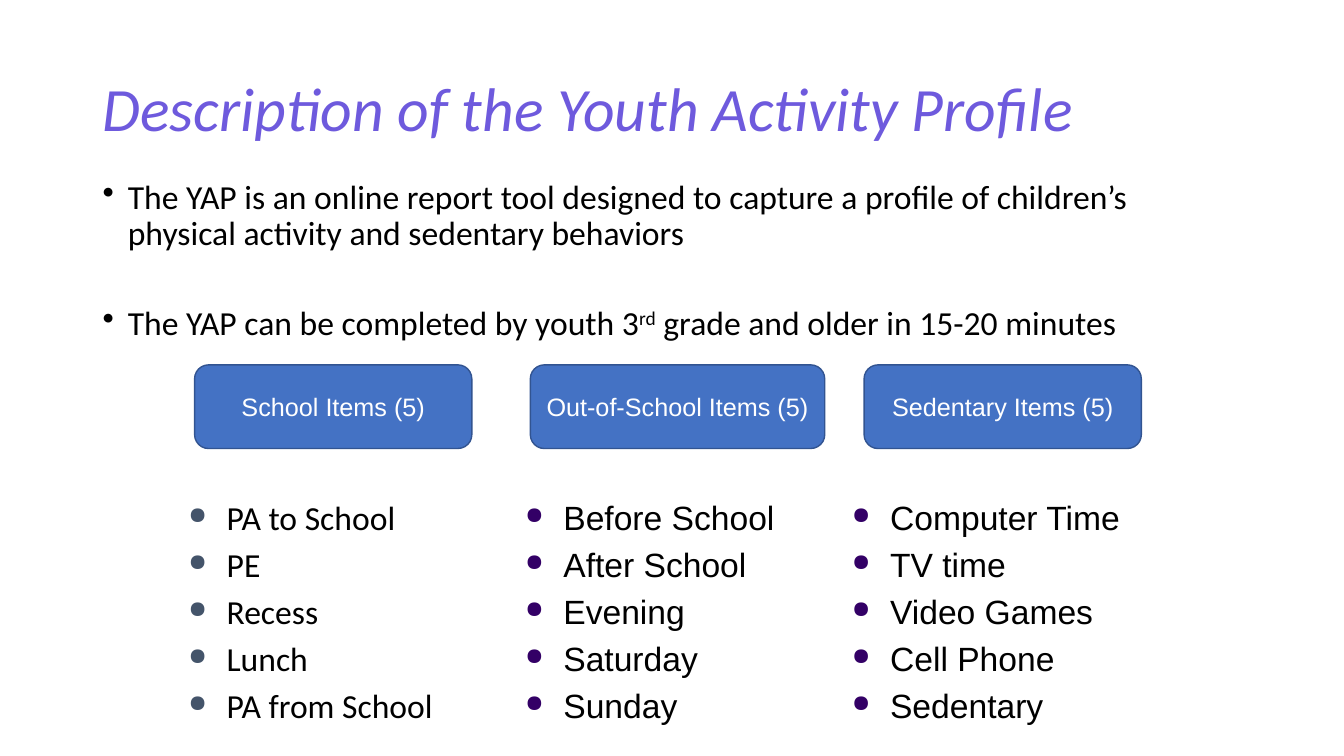
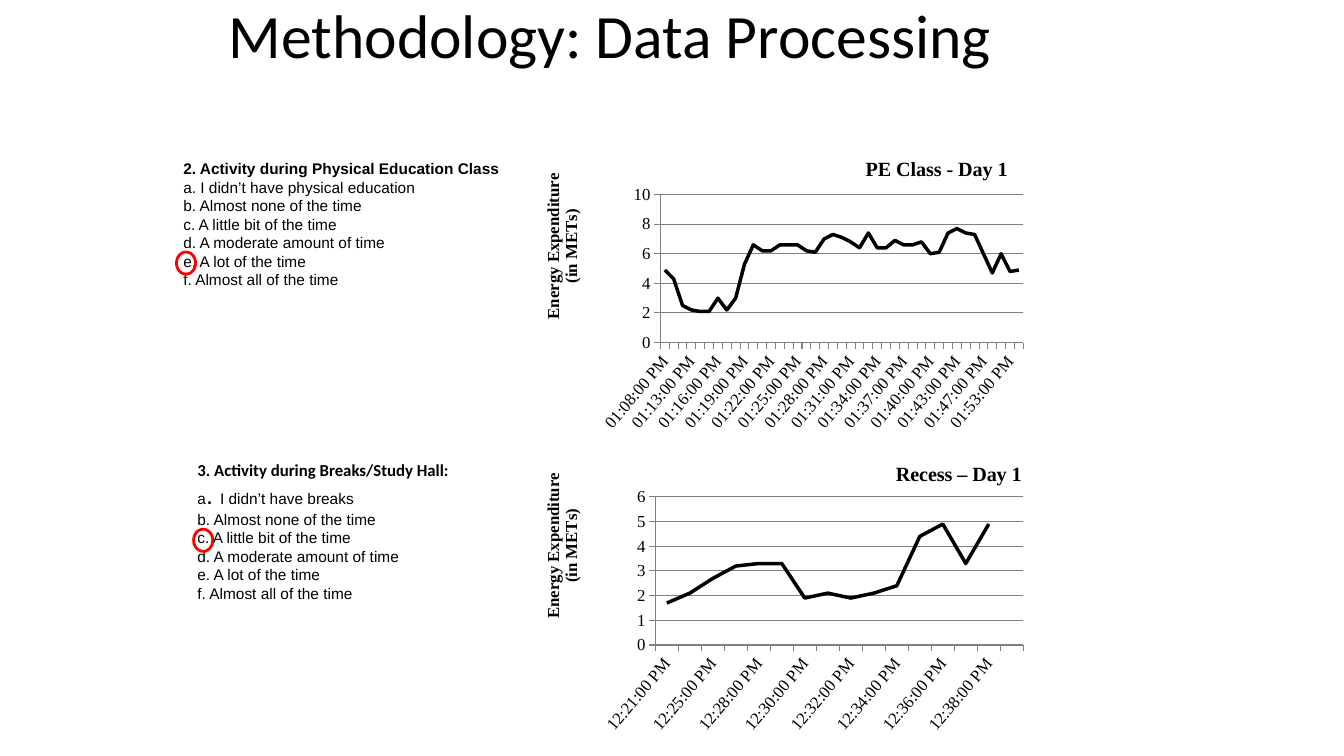
"""Builds two slides on the Youth Activity Profile and its data processing."""
import lxml.etree
import pptx
import pptx.chart.data
import pptx.dml.color
import pptx.enum.chart
import pptx.enum.shapes
import pptx.enum.text
import pptx.oxml
import pptx.oxml.ns
import pptx.util

PX = 9144
SLIDE_SIZE = (1333, 750)
COLORS = {
    "text": "000000", "title": "6E5ADD", "box": "4472C4", "box_line": "325491",
    "box_text": "FFFFFF", "bullet_slate": "44546A", "bullet_purple": "330066",
    "circle": "FF0000", "grid": "808080",
}
SANS, HUMANIST, SERIF = "Arial", "Calibri", "Times New Roman"
QN = pptx.oxml.ns.qn

PROFILE_TITLE = "Description of the Youth Activity Profile"
PROFILE_POINTS = [
    "The YAP is an online report tool designed to capture a profile of children’s "
    "physical activity and sedentary behaviors",
    [("The YAP can be completed by youth 3", {}), ("rd", {"raised": True}),
     (" grade and older in 15-20 minutes", {})],
]
ITEM_GROUPS = [
    {"heading": "School Items (5)", "left": 193, "width": 275, "list_left": 177,
     "font": HUMANIST, "bullet": "bullet_slate",
     "items": ["PA to School", "PE", "Recess", "Lunch", "PA from School"]},
    {"heading": "Out-of-School Items (5)", "left": 526, "width": 292, "list_left": 511,
     "font": SANS, "bullet": "bullet_purple",
     "items": ["Before School", "After School", "Evening", "Saturday", "Sunday"]},
    {"heading": "Sedentary Items (5)", "left": 857, "width": 275, "list_left": 835,
     "font": SANS, "bullet": "bullet_purple",
     "items": ["Computer Time", "TV time", "Video Games", "Cell Phone", "Sedentary"]},
]

METHOD_TITLE = "Methodology: Data Processing"
SHARED_ANSWERS = [
    "b. Almost none of the time", "c. A little bit of the time",
    "d. A moderate amount of time", "e. A lot of the time", "f. Almost all of the time",
]
QUESTIONS = [
    {"box": (172, 153, 336, 142), "circle": (175, 250), "gap": 0,
     "heading": ("2. Activity during Physical Education Class", {"bold": True}),
     "first": "a. I didn’t have physical education"},
    {"box": (186, 453, 273, 153), "circle": (192, 525), "gap": 8,
     "heading": ("3. Activity during Breaks/Study Hall:",
                 {"bold": True, "size": 12, "font": HUMANIST}),
     "first": [("a", {}), (". ", {"size": 18}), ("I didn’t have breaks", {})]},
]
AXIS_TITLE = "Energy Expenditure\n(in METs)"
CHARTS = [
    {"title": "PE Class - Day 1", "top": 133, "label_step": 3, "scale": (10, 2),
     "title_at": (0.66, 0.06), "axis_title_at": (0.02, 0.12),
     "plot": (0.26, 0.2, 0.72, 0.49),
     "minutes": [788, 790, 792, *range(793, 826), *range(827, 836, 2)],
     "mets": [4.9, 4.3, 2.5, 2.2, 2.1, 2.1, 3, 2.2, 3, 5.3, 6.6, 6.2, 6.2, 6.6, 6.6,
              6.6, 6.2, 6.1, 7, 7.3, 7.1, 6.8, 6.4, 7.4, 6.4, 6.4, 6.9, 6.6, 6.6, 6.8,
              6, 6.1, 7.4, 7.7, 7.4, 7.3, 6, 4.7, 6, 4.8, 4.9]},
    {"title": "Recess – Day 1", "top": 433, "label_step": 2, "scale": (6, 1),
     "title_at": (0.72, 0.07), "axis_title_at": (0.02, 0.11),
     "plot": (0.25, 0.2, 0.73, 0.49),
     "minutes": [741, 743, 745, 747, *range(748, 760)],
     "mets": [1.7, 2.1, 2.7, 3.2, 3.3, 3.3, 1.9, 2.1, 1.9, 2.1, 2.4, 4.4, 4.9, 3.3,
              4.9, None]},
]


def emu(*lengths):
    return [length * PX for length in lengths]


def rgb(name):
    return pptx.dml.color.RGBColor.from_string(COLORS[name])


def style_font(font, face, size, color="text", bold=False, italic=False):
    font.name, font.size, font.bold, font.italic = face, pptx.util.Pt(size), bold, italic
    font.color.rgb = rgb(color)


def add_bullet(paragraph, char, indent, color=None, percent=None):
    properties = paragraph._p.get_or_add_pPr()
    properties.set("marL", str(indent * PX))
    properties.set("indent", str(-indent * PX))
    if color:
        tint = lxml.etree.SubElement(properties, QN("a:buClr"))
        lxml.etree.SubElement(tint, QN("a:srgbClr")).set("val", COLORS[color])
    if percent:
        lxml.etree.SubElement(properties, QN("a:buSzPct")).set("val", str(percent * 1000))
    lxml.etree.SubElement(properties, QN("a:buChar")).set("char", char)


def fill_text(frame, lines, face, size, color="text", italic=False, spacing=None,
              bullet=None, gaps=(), align=None):
    for index, line in enumerate(lines):
        paragraph = frame.paragraphs[0] if index == 0 else frame.add_paragraph()
        if bullet:
            add_bullet(paragraph, **bullet)
        if spacing:
            paragraph.line_spacing = spacing
        if index and index <= len(gaps):
            paragraph.space_before = pptx.util.Pt(gaps[index - 1])
        if align is not None:
            paragraph.alignment = align
        pieces = [(line, {})] if isinstance(line, str) else line
        for text, changes in pieces:
            run = paragraph.add_run()
            run.text = text
            style_font(run.font, changes.get("font", face), changes.get("size", size),
                       color, changes.get("bold", False), italic)
            if changes.get("raised"):
                run._r.get_or_add_rPr().set("baseline", "30000")


def add_text(slide, box, lines, face, size, wrap=True, middle=False, **options):
    frame = slide.shapes.add_textbox(*emu(*box)).text_frame
    frame.word_wrap = wrap
    anchors = pptx.enum.text.MSO_ANCHOR
    frame.vertical_anchor = anchors.MIDDLE if middle else anchors.TOP
    fill_text(frame, lines, face, size, **options)


def add_title(slide, box, text, **options):
    add_text(slide, box, [text], HUMANIST, 44, middle=True, **options)


def add_outline(slide, preset, box, line, width, fill=None):
    shape = slide.shapes.add_shape(preset, *emu(*box))
    shape.shadow.inherit = False
    if fill:
        shape.fill.solid()
        shape.fill.fore_color.rgb = rgb(fill)
    else:
        shape.fill.background()
    shape.line.color.rgb = rgb(line)
    shape.line.width = pptx.util.Pt(width)
    return shape


def place(element, index, position, inner=False):
    for old in element.findall(QN("c:layout")):
        element.remove(old)
    layout = pptx.oxml.parse_xml(
        f'<c:layout {pptx.oxml.ns.nsdecls("c")}><c:manualLayout/></c:layout>')
    values = [("layoutTarget", "inner")] if inner else []
    values += [("xMode", "edge"), ("yMode", "edge"), *zip("xywh", position)]
    for tag, value in values:
        lxml.etree.SubElement(layout[0], QN("c:" + tag)).set("val", str(value))
    element.insert(index, layout)


def set_chart_title(title, text, size, position):
    title.text_frame.text = text
    for paragraph in title.text_frame.paragraphs:
        for run in paragraph.runs:
            style_font(run.font, SERIF, size, bold=True)
    place(title._element, 1, position)


def clock(minutes):
    hour, minute = divmod(minutes, 60)
    return f"{(hour - 1) % 12 + 1:02}:{minute:02}:00 PM"


def add_energy_chart(slide, content):
    data = pptx.chart.data.CategoryChartData(number_format="General")
    data.categories = [clock(minutes) for minutes in content["minutes"]]
    data.add_series("Series 1", content["mets"])
    chart = slide.shapes.add_chart(pptx.enum.chart.XL_CHART_TYPE.LINE,
                                   *emu(525, content["top"], 500, 300), data).chart
    style_font(chart.font, SERIF, 12)
    chart.has_legend = False
    set_chart_title(chart.chart_title, content["title"], 14.4, content["title_at"])
    place(chart._chartSpace.chart.plotArea, 0, content["plot"], inner=True)

    plot = chart.plots[0]
    plot.vary_by_categories = False
    series = plot.series[0]
    series.smooth = False
    series.format.line.color.rgb = rgb("text")
    series.format.line.width = pptx.util.Pt(2.5)

    times, energy = chart.category_axis, chart.value_axis
    energy.minimum_scale = 0
    energy.maximum_scale, energy.major_unit = content["scale"]
    energy.has_major_gridlines = True
    for line in (times.format.line, energy.format.line, energy.major_gridlines.format.line):
        line.color.rgb = rgb("grid")
        line.width = pptx.util.Pt(0.75)
    for axis in (times, energy):
        axis.major_tick_mark = pptx.enum.chart.XL_TICK_MARK.OUTSIDE
        style_font(axis.tick_labels.font, SERIF, 12)
    set_chart_title(energy.axis_title, AXIS_TITLE, 12, content["axis_title_at"])
    title_body = energy.axis_title.text_frame._txBody.bodyPr
    title_body.set("rot", "-5400000")
    title_body.set("vert", "horz")
    times._element.get_or_add_txPr().bodyPr.set("rot", "-3000000")
    skip = lxml.etree.Element(QN("c:tickLblSkip"))
    skip.set("val", str(content["label_step"]))
    times._element.find(QN("c:noMultiLvlLbl")).addprevious(skip)


def build_profile(slide):
    add_title(slide, (92, 40, 1150, 145), PROFILE_TITLE, color="title", italic=True,
              spacing=0.8)
    add_text(slide, (92, 174, 1150, 185), PROFILE_POINTS, HUMANIST, 24, spacing=0.9,
             gaps=[38], bullet={"char": "•", "indent": 25})
    for group in ITEM_GROUPS:
        heading = add_outline(slide, pptx.enum.shapes.MSO_SHAPE.ROUNDED_RECTANGLE,
                              (group["left"], 362, group["width"], 83), "box_line", 1, "box")
        heading.text_frame.vertical_anchor = pptx.enum.text.MSO_ANCHOR.MIDDLE
        fill_text(heading.text_frame, [group["heading"]], SANS, 18, color="box_text",
                  align=pptx.enum.text.PP_ALIGN.CENTER)
        add_text(slide, (group["list_left"], 488, 307, 260), group["items"], group["font"],
                 24, spacing=pptx.util.Pt(28.8), gaps=[4.8] * 4,
                 bullet={"char": "●", "indent": 38, "color": group["bullet"],
                         "percent": 70})


def build_method(slide):
    add_title(slide, (217, 0, 825, 76), METHOD_TITLE, spacing=0.9)
    for content in CHARTS:
        add_energy_chart(slide, content)
    for question in QUESTIONS:
        lines = [[question["heading"]], question["first"], *SHARED_ANSWERS]
        add_text(slide, question["box"], lines, SANS, 11, wrap=False,
                 spacing=pptx.util.Pt(13.2), gaps=[question["gap"]])
        add_outline(slide, pptx.enum.shapes.MSO_SHAPE.OVAL,
                    (*question["circle"], 19, 22), "circle", 2)


def main():
    deck = pptx.Presentation()
    deck.slide_width, deck.slide_height = emu(*SLIDE_SIZE)
    for build in (build_profile, build_method):
        build(deck.slides.add_slide(deck.slide_layouts[6]))
    deck.save("out.pptx")


if __name__ == "__main__":
    main()
